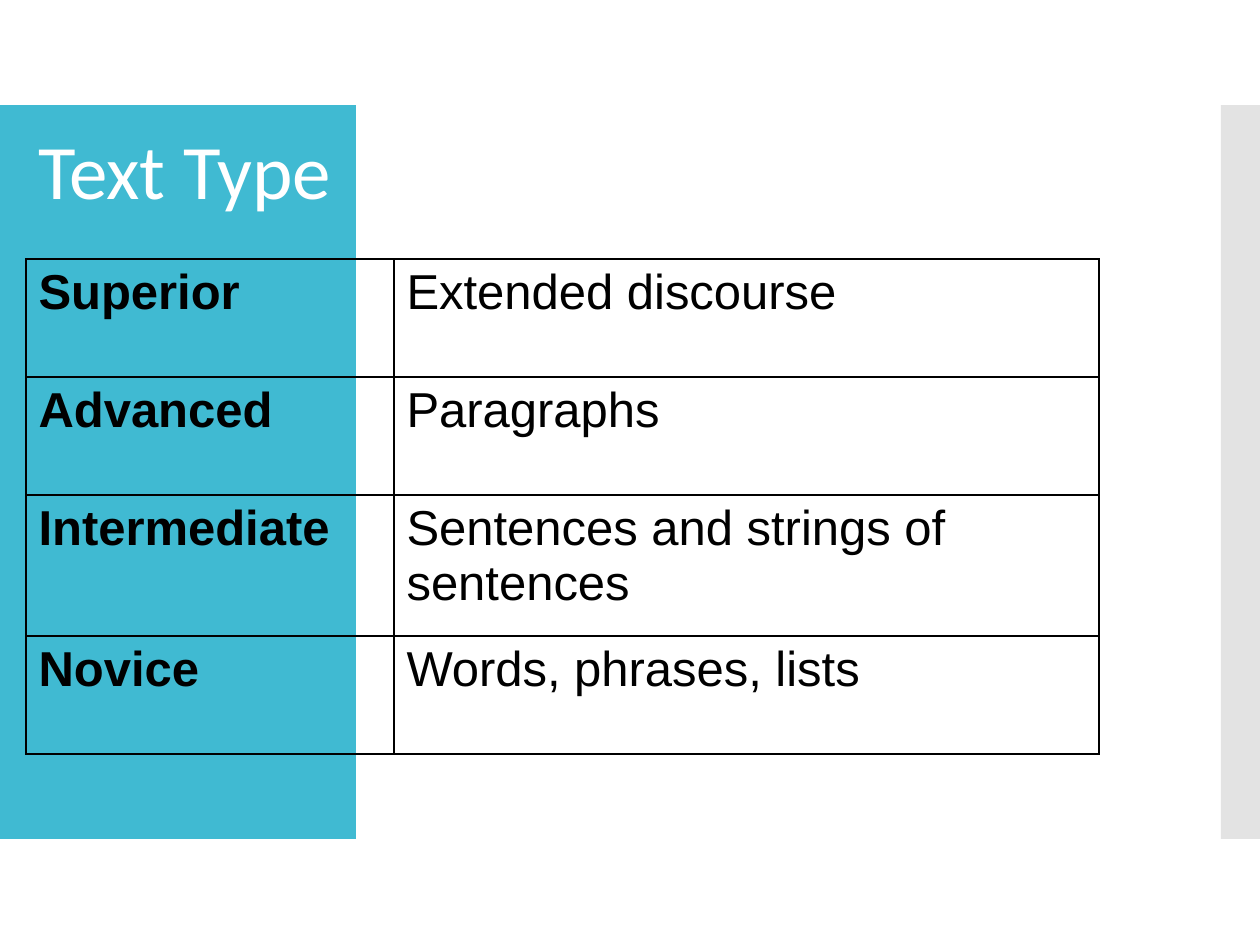
from dataclasses import dataclass

from lxml.etree import SubElement
from pptx import Presentation
from pptx.dml.color import RGBColor
from pptx.enum.shapes import MSO_SHAPE as Shape
from pptx.enum.text import MSO_ANCHOR as Anchor, PP_ALIGN as Align
from pptx.oxml import parse_xml
from pptx.oxml.ns import nsdecls, qn
from pptx.util import Emu, Pt

PX_PER_INCH = 126
TEAL = RGBColor(0x40, 0xBA, 0xD2)
GREY = RGBColor(0xC8, 0xC8, 0xC8)
WHITE = RGBColor(0xFF, 0xFF, 0xFF)
BLACK = RGBColor(0x00, 0x00, 0x00)
TITLE_FORMAT = {"name": "Calibri", "size": Pt(44), "bold": False}
CELL_FORMAT = {"name": "Arial", "size": Pt(28)}


@dataclass(frozen=True)
class Band:
    left: int
    width: int
    color: RGBColor
    opacity: int = 100


@dataclass(frozen=True)
class Level:
    name: str
    text_type: str
    height: int = 118


BAND_TOP, BAND_HEIGHT = 105, 734
BANDS = [Band(0, 356, TEAL), Band(1221, 39, GREY, 50)]
COLUMN_WIDTHS = [368, 705]
LEVELS = [
    Level("Superior", "Extended discourse"),
    Level("Advanced", "Paragraphs"),
    Level("Intermediate", "Sentences and strings of sentences", 141),
    Level("Novice", "Words, phrases, lists"),
]


def px(length: int) -> Emu:
    return Emu(round(length * 914400 / PX_PER_INCH))


def format_font(font, values: dict, color: RGBColor) -> None:
    for name, value in values.items():
        setattr(font, name, value)
    font.color.rgb = color


def draw_band(page, band: Band) -> None:
    box = page.shapes.add_shape(
        Shape.RECTANGLE, px(band.left), px(BAND_TOP), px(band.width), px(BAND_HEIGHT)
    )
    box.shadow.inherit = False
    box.fill.solid()
    box.fill.fore_color.rgb = band.color
    box.line.fill.background()
    if band.opacity < 100:
        color = box.fill._xPr.find(qn("a:solidFill"))[0]
        SubElement(color, qn("a:alpha"), val=str(band.opacity * 1000))


def draw_title(page, text: str) -> None:
    title = page.shapes.title
    places = {"left": 26, "top": -29, "width": 906, "height": 407}
    for name, length in places.items():
        setattr(title, name, px(length))
    frame = title.text_frame
    frame.text = text
    frame.word_wrap = True
    frame.vertical_anchor = Anchor.MIDDLE
    para = frame.paragraphs[0]
    para.alignment = Align.LEFT
    para.line_spacing = 0.9
    format_font(para.runs[0].font, TITLE_FORMAT, WHITE)


def draw_borders(cell) -> None:
    properties = cell._tc.get_or_add_tcPr()
    for index, side in enumerate(("lnL", "lnR", "lnT", "lnB")):
        border = parse_xml(
            f'<a:{side} {nsdecls("a")} w="{Pt(1)}"><a:solidFill>'
            f'<a:srgbClr val="{BLACK}"/></a:solidFill></a:{side}>'
        )
        properties.insert(index, border)


def fill_cell(cell, text: str, bold: bool) -> None:
    cell.text = text
    cell.fill.background()
    draw_borders(cell)
    span = cell.text_frame.paragraphs[0].runs[0]
    format_font(span.font, CELL_FORMAT | {"bold": bold}, BLACK)


def draw_levels(page, levels: list[Level]) -> None:
    table = page.shapes.add_table(
        len(levels), len(COLUMN_WIDTHS), px(26), px(259),
        px(sum(COLUMN_WIDTHS)), px(sum(level.height for level in levels)),
    ).table
    table.first_row = False
    table.horz_banding = False
    for column, width in zip(table.columns, COLUMN_WIDTHS):
        column.width = px(width)
    for row, level in zip(table.rows, levels):
        row.height = px(level.height)
        fill_cell(row.cells[0], level.name, True)
        fill_cell(row.cells[1], level.text_type, False)


def main() -> None:
    deck = Presentation()
    deck.slide_width, deck.slide_height = px(1260), px(945)
    page = deck.slides.add_slide(deck.slide_layouts[5])
    for band in BANDS:
        draw_band(page, band)
    title_element = page.shapes.title._element
    title_element.getparent().append(title_element)
    draw_title(page, "Text Type")
    draw_levels(page, LEVELS)
    deck.save("out.pptx")


if __name__ == "__main__":
    main()
